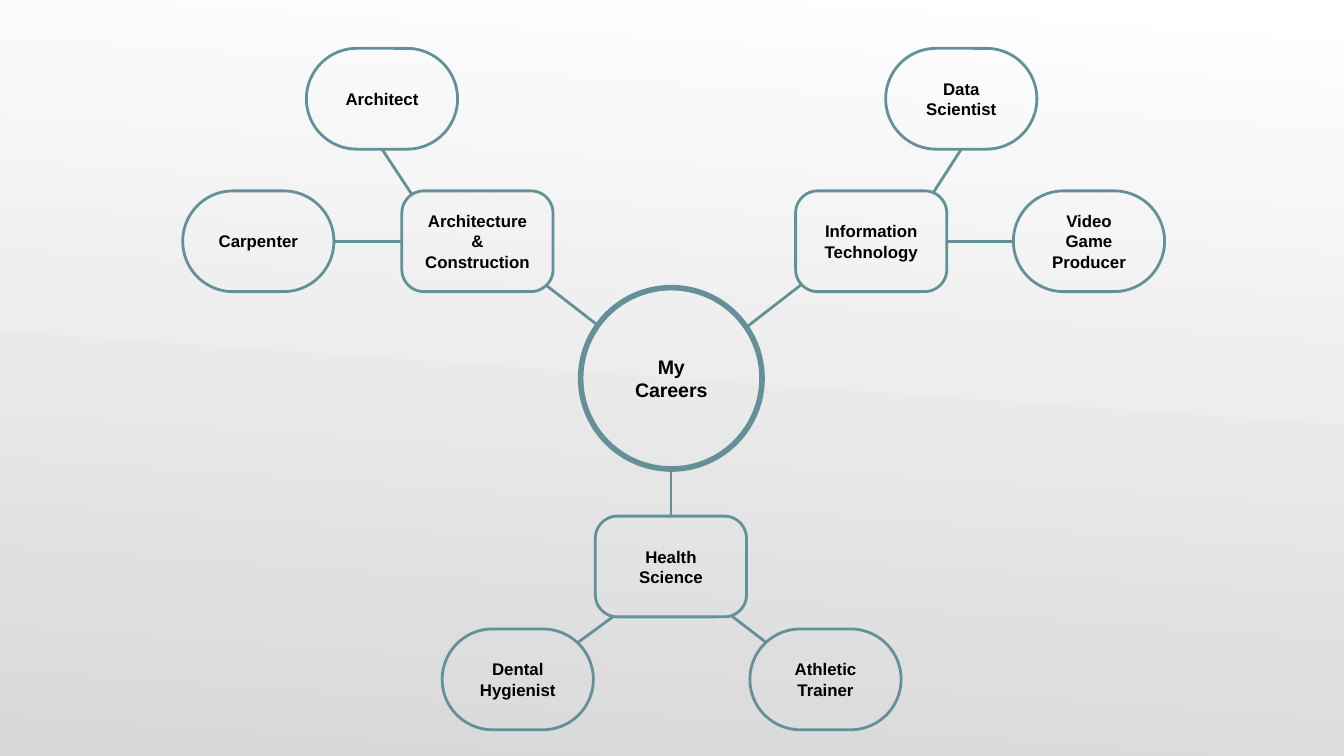
import pptx
import pptx.util
import pptx.dml.color
import pptx.enum.shapes
import pptx.enum.text
import pptx.oxml.ns
import lxml.etree

Inches = pptx.util.Inches
Pt = pptx.util.Pt
kinds = pptx.enum.shapes.MSO_SHAPE
colors = {"teal": "649197", "text": "000000", "top": "FFFFFF", "base": "D8D8D8"}


def tint(name):
    return pptx.dml.color.RGBColor.from_string(colors[name])


def add_node(kind, left, top, width, height, label, line, size):
    node = slide.shapes.add_shape(
        kind, Inches(left), Inches(top), Inches(width), Inches(height))
    node.shadow.inherit = False
    node.fill.background()
    node.line.color.rgb = tint("teal")
    node.line.width = Pt(line)
    frame = node.text_frame
    frame.word_wrap = True
    frame.vertical_anchor = pptx.enum.text.MSO_ANCHOR.MIDDLE
    para = frame.paragraphs[0]
    para.alignment = pptx.enum.text.PP_ALIGN.CENTER
    run = para.add_run()
    run.text = label
    run.font.name = "Arial"
    run.font.size = Pt(size)
    run.font.bold = True
    run.font.color.rgb = tint("text")
    return node


# Widescreen slide, 16 by 9
deck = pptx.Presentation()
deck.slide_width, deck.slide_height = Inches(10), Inches(10 * 9 / 16)
slide = deck.slides.add_slide(deck.slide_layouts[6])

# Background gradient, white at the top
back = slide.background.fill
back.gradient()
back.gradient_angle = 266
for stop, name in zip(back.gradient_stops, ("top", "base")):
    stop.color.rgb = tint(name)

# Fields (slightly rounded) and careers (fully rounded)
field, career = 0.22, 0.5
tall = 0.75
wide = tall * 1.5
boxes = [
    ("Architecture & Construction", 2.99, 1.42, field),
    ("Architect", 2.28, 0.36, career),
    ("Carpenter", 1.36, 1.42, career),
    ("Information Technology", 5.92, 1.42, field),
    ("Data Scientist", 6.59, 0.36, career),
    ("Video Game Producer", 7.54, 1.42, career),
    ("Health Science", 4.43, 3.84, field),
    ("Dental Hygienist", 3.29, 4.68, career),
    ("Athletic Trainer", 5.58, 4.68, career),
]
nodes = {}
for label, left, top, curve in boxes:
    node = add_node(kinds.ROUNDED_RECTANGLE, left, top, wide, tall, label, 1.5, 9)
    node.adjustments[0] = curve
    nodes[label] = node

# Links: start, end, then the (node, side) joined at each end
mid = 4.43 + wide / 2
links = [
    (5.56, 2.43, 5.96, 2.12, None, None),
    (4.46, 2.43, 4.06, 2.12, None, None),
    (mid, 3.84, mid, 3.49, ("Health Science", 0), None),
    (7.04, 1.79, 7.54, 1.79,
     ("Information Technology", 3), ("Video Game Producer", 1)),
    (2.49, 1.79, 2.99, 1.79,
     ("Carpenter", 3), ("Architecture & Construction", 1)),
    (6.94, 1.44, 7.16, 1.11, None, ("Data Scientist", 2)),
    (3.06, 1.44, 2.84, 1.11, None, ("Architect", 2)),
    (4.3, 4.78, 4.56, 4.59, None, None),
    (5.7, 4.78, 5.44, 4.58, None, None),
]
for x1, y1, x2, y2, start, end in links:
    link = slide.shapes.add_connector(
        pptx.enum.shapes.MSO_CONNECTOR.STRAIGHT,
        Inches(x1), Inches(y1), Inches(x2), Inches(y2))
    link.line.color.rgb = tint("teal")
    link.line.width = Pt(1.5)
    lxml.etree.SubElement(
        link._element.spPr, pptx.oxml.ns.qn("a:effectLst"))
    if start:
        link.begin_connect(nodes[start[0]], start[1])
    if end:
        link.end_connect(nodes[end[0]], end[1])

# Central topic
add_node(kinds.OVAL, 4.32, 2.14, 1.35, 1.35, "My Careers", 3, 10.5)

deck.save("out.pptx")
